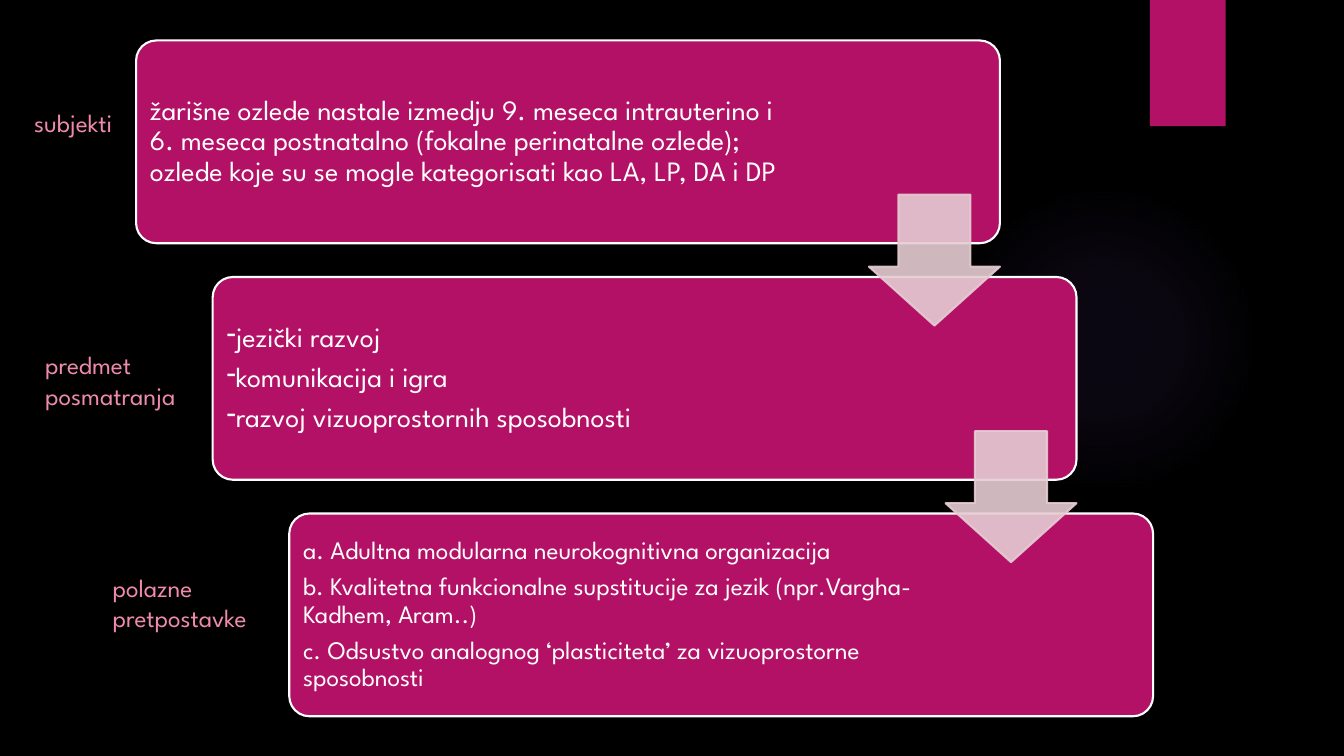
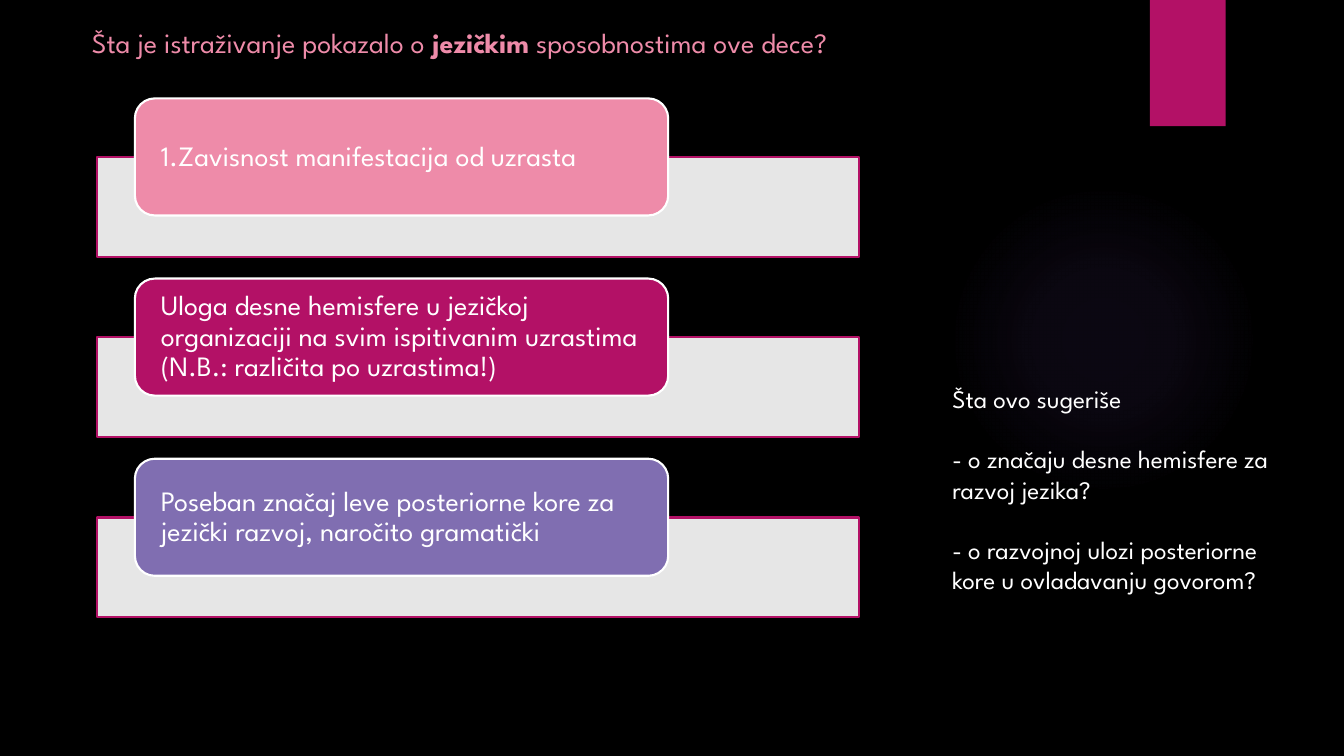
"""Build two slides on subjects and language findings of a focal injury study."""
import dataclasses

import pptx
import pptx.dml.color
import pptx.enum.shapes
import pptx.enum.text
import pptx.oxml
import pptx.oxml.ns
import pptx.oxml.xmlchemy
import pptx.util

Cm = pptx.util.Cm
Pt = pptx.util.Pt
Shape = pptx.enum.shapes.MSO_SHAPE
Anchor = pptx.enum.text.MSO_ANCHOR


@dataclasses.dataclass(frozen=True)
class Theme:
    font: str = "League Spartan"
    large: int = 20
    small: int = 18
    outline: float = 1.5
    background: str = "000000"
    white: str = "FFFFFF"
    magenta: str = "B31166"
    pink: str = "EE8BA9"
    violet: str = "806EB1"
    arrow: str = "E5CCD3"
    glow: str = "9B6BF2"
    glow_stops: tuple = ((0, 7), (36, 6), (69, 0))


THEME = Theme()


def rgb(color):
    return pptx.dml.color.RGBColor.from_string(color)


def set_alpha(parent, percent):
    color = next(parent.iter(pptx.oxml.ns.qn("a:srgbClr")))
    alpha = pptx.oxml.xmlchemy.OxmlElement("a:alpha")
    alpha.set("val", str(percent * 1000))
    color.append(alpha)


def add_bullet(paragraph, tag, **attributes):
    properties = paragraph._p.get_or_add_pPr()
    properties.set("marL", "0")
    properties.set("indent", "0")
    bullet = pptx.oxml.xmlchemy.OxmlElement(tag)
    for name, value in attributes.items():
        bullet.set(name, value)
    properties.append(bullet)


def write_text(frame, paragraphs, size=THEME.small, color=THEME.white, anchor=Anchor.TOP,
               wrap=True, insets=None, line_spacing=None, space_before=0, space_after=0,
               dashes=False, numbered=False):
    """Fill a frame; a paragraph is a string or a tuple of alternating regular and bold runs."""
    frame.word_wrap = wrap
    frame.auto_size = pptx.enum.text.MSO_AUTO_SIZE.NONE
    frame.vertical_anchor = anchor
    if insets:
        frame.margin_left, frame.margin_top, frame.margin_right, frame.margin_bottom = map(Cm, insets)
    for index, content in enumerate(paragraphs):
        paragraph = frame.add_paragraph() if index else frame.paragraphs[0]
        paragraph.alignment = pptx.enum.text.PP_ALIGN.LEFT
        paragraph.space_before = Pt(space_before if index else 0)
        paragraph.space_after = Pt(space_after)
        if line_spacing:
            paragraph.line_spacing = line_spacing
        if dashes:
            add_bullet(paragraph, "a:buChar", char="-")
        if numbered:
            add_bullet(paragraph, "a:buAutoNum", type="arabicPeriod")
        runs = (content,) if isinstance(content, str) else content
        for position, text in enumerate(runs):
            run = paragraph.add_run()
            run.text = text
            run.font.name = THEME.font
            run.font.size = Pt(size)
            run.font.bold = position % 2 == 1
            run.font.color.rgb = rgb(color)


def add_shape(slide, kind, box, fill, line=None, adjustments=(), fill_alpha=None, line_alpha=None):
    shape = slide.shapes.add_shape(kind, *map(Cm, box))
    shape.shadow.inherit = False
    shape.fill.solid()
    shape.fill.fore_color.rgb = rgb(fill)
    if line:
        shape.line.color.rgb = rgb(line)
        shape.line.width = Pt(THEME.outline)
    else:
        shape.line.fill.background()
    for index, value in enumerate(adjustments):
        shape.adjustments[index] = value
    properties = shape.element.spPr
    if fill_alpha:
        set_alpha(properties.find(pptx.oxml.ns.qn("a:solidFill")), fill_alpha)
    if line_alpha:
        set_alpha(properties.find(pptx.oxml.ns.qn("a:ln")), line_alpha)
    return shape


def add_card(slide, box, fill, paragraphs, corner, insets, size=THEME.large, **text_format):
    card = add_shape(slide, Shape.ROUNDED_RECTANGLE, box, fill, THEME.white, (corner,))
    write_text(card.text_frame, paragraphs, size=size, anchor=Anchor.MIDDLE, insets=insets,
               line_spacing=0.9, space_after=size * 0.35, **text_format)


def add_text(slide, box, paragraphs, **text_format):
    write_text(slide.shapes.add_textbox(*map(Cm, box)).text_frame, paragraphs, **text_format)


def make_radial(shape, color, stops):
    stop_xml = "".join(
        f'<a:gs pos="{position * 1000}"><a:srgbClr val="{color}">'
        f'<a:alpha val="{alpha * 1000}"/></a:srgbClr></a:gs>'
        for position, alpha in stops)
    gradient = pptx.oxml.parse_xml(
        f'<a:gradFill {pptx.oxml.ns.nsdecls("a")}><a:gsLst>{stop_xml}</a:gsLst>'
        '<a:path path="circle"><a:fillToRect l="50000" t="50000" r="50000" b="50000"/>'
        '</a:path></a:gradFill>')
    properties = shape.element.spPr
    properties.replace(properties.find(pptx.oxml.ns.qn("a:solidFill")), gradient)


def style_master(presentation, slide):
    """Draw the backdrop on a slide and move it to the master that all slides share."""
    master = presentation.slide_master
    master.background.fill.solid()
    master.background.fill.fore_color.rgb = rgb(THEME.background)
    glow = add_shape(slide, Shape.OVAL, (23.9, 4.65, 7.82, 7.82), THEME.glow)
    make_radial(glow, THEME.glow, THEME.glow_stops)
    band = add_shape(slide, Shape.RECTANGLE, (28.98, 0, 1.91, 3.18), THEME.magenta)
    for number, shape in enumerate((glow, band), start=20):
        shape.element.nvSpPr.cNvPr.id = number
        master.shapes.element.append(shape.element)


def build_study_slide(slide):
    left, top, width, height = 3.43, 1.02, 21.77, 5.11
    step_across, step_down, arrow_size = 1.93, 5.96, 3.3
    cards = (
        (("žarišne ozlede nastale izmedju 9. meseca intrauterino i 6. meseca postnatalno "
          "(fokalne perinatalne ozlede); ozlede koje su se mogle kategorisati kao LA, LP, DA i DP",),
         {}),
        (("jezički razvoj", "komunikacija i igra", "razvoj vizuoprostornih sposobnosti"),
         {"dashes": True}),
        (("a. Adultna modularna neurokognitivna organizacija",
          "b. Kvalitetna funkcionalne supstitucije za jezik (npr.Vargha-Kadhem, Aram..)",
          "c. Odsustvo analognog ‘plasticiteta’ za vizuoprostorne sposobnosti"),
         {"size": THEME.small}),
    )
    for index, (paragraphs, text_format) in enumerate(cards):
        box = (left + index * step_across, top + index * step_down, width, height)
        add_card(slide, box, THEME.magenta, paragraphs, 0.1, (0.2, 0.2, 5.38, 0.2), **text_format)
    gap = step_down - height
    for index in range(len(cards) - 1):
        arrow_left = left + index * step_across + width - arrow_size
        arrow_top = top + index * step_down + height + (gap - arrow_size) / 2
        add_shape(slide, Shape.DOWN_ARROW, (arrow_left, arrow_top, arrow_size, arrow_size),
                  THEME.arrow, THEME.arrow, (0.55, 0.45), fill_alpha=90, line_alpha=90)
    labels = (
        ("subjekti", (0.61, 2.57, 2.79, 1.02), False),
        ("predmet posmatranja", (0.89, 8.69, 4.5, 1.8), True),
        ("polazne pretpostavke", (2.59, 14.3, 4.5, 1.8), True),
    )
    for label, box, wrap in labels:
        add_text(slide, box, (label,), color=THEME.pink, wrap=wrap)


def build_findings_slide(slide):
    title = slide.shapes.title
    title.left, title.top, title.width, title.height = map(Cm, (2.06, 0.51, 26, 1.12))
    write_text(title.text_frame,
               (("Šta je istraživanje pokazalo o ", "jezičkim", " sposobnostima ove dece?"),),
               size=THEME.large, color=THEME.pink)
    findings = (
        ("Zavisnost manifestacija od uzrasta", THEME.pink, True),
        ("Uloga desne hemisfere u jezičkoj organizaciji na svim ispitivanim uzrastima "
         "(N.B.: različita po uzrastima!)", THEME.magenta, False),
        ("Poseban značaj leve posteriorne kore za jezički razvoj, naročito gramatički",
         THEME.violet, False),
    )
    for index, (finding, fill, numbered) in enumerate(findings):
        offset = index * 4.54
        add_shape(slide, Shape.RECTANGLE, (2.44, 3.96 + offset, 19.2, 2.52),
                  THEME.white, THEME.magenta, fill_alpha=90)
        add_card(slide, (3.4, 2.48 + offset, 13.44, 2.95), fill, (finding,), 0.17,
                 (0.51, 0, 0.51, 0), numbered=numbered)
    add_text(slide, (23.75, 9.53, 8.61, 6.4),
             ("Šta ovo sugeriše",
              "- o značaju desne hemisfere za razvoj jezika?",
              "- o razvojnoj ulozi posteriorne kore u ovladavanju govorom?"),
             space_before=21.6)


def main():
    presentation = pptx.Presentation()
    presentation.slide_width, presentation.slide_height = Cm(33.87), Cm(19.05)
    title_only, blank = presentation.slide_layouts[5], presentation.slide_layouts[6]
    study_slide = presentation.slides.add_slide(blank)
    style_master(presentation, study_slide)
    build_study_slide(study_slide)
    build_findings_slide(presentation.slides.add_slide(title_only))
    presentation.save("out.pptx")


if __name__ == "__main__":
    main()
